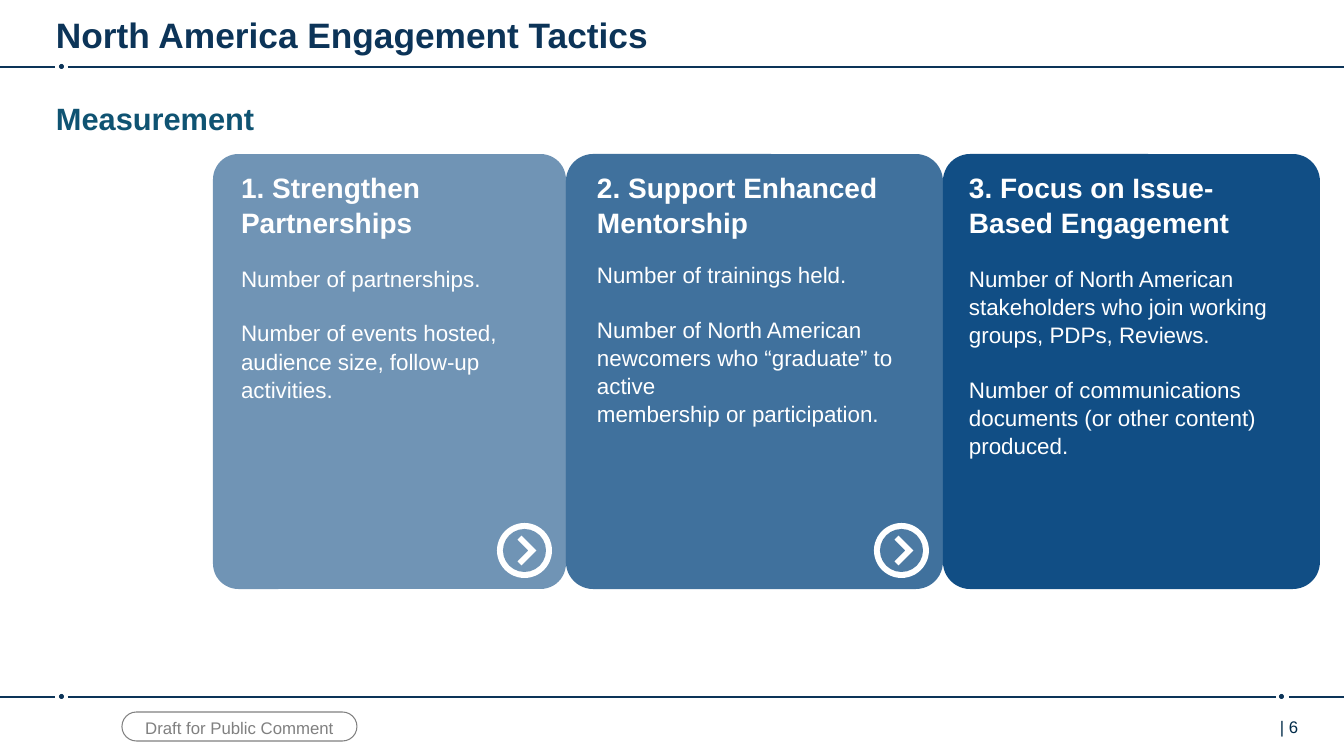
import pptx
import pptx.util
import pptx.dml.color
import pptx.oxml.ns
import pptx.enum.shapes
import pptx.enum.text
import lxml.etree as etree

PX = 914400 / 100.8
NAVY, BLUE, TEAL, GREY, WHITE = "0C3458", "114E85", "0F5372", "808080", "FFFFFF"
SHAPE = pptx.enum.shapes.MSO_SHAPE
CENTER = pptx.enum.text.PP_ALIGN.CENTER
CARD_TOP, CARD_HEIGHT = 154, 435

# Each paragraph: text, size, bold, space before in points
CARDS = [
    {"left": 213, "width": 353, "opacity": 60, "badge_opacity": 60,
     "text_left": 241, "text_width": 306, "paragraphs": [
         ("1. Strengthen Partnerships", 20, True, 0),
         ("Number of partnerships.", 16, False, 17),
         ("Number of events hosted, audience size, follow-up activities.", 16, False, 19)]},
    {"left": 566, "width": 377, "opacity": 80, "badge_opacity": 75,
     "text_left": 597, "text_width": 320, "paragraphs": [
         ("2. Support Enhanced Mentorship", 20, True, 0),
         ("Number of trainings held.", 16, False, 14.5),
         ("Number of North American newcomers who “graduate” to active", 16, False, 19),
         ("membership or participation.", 16, False, 0)]},
    {"left": 943, "width": 377, "opacity": 100, "badge_opacity": None,
     "text_left": 969, "text_width": 325, "paragraphs": [
         ("3. Focus on Issue-Based Engagement", 20, True, 0),
         ("Number of North American stakeholders who join working groups, PDPs, Reviews.",
          16, False, 17),
         ("Number of communications documents (or other content) produced.", 16, False, 19)]},
]


def px(*lengths):
    return [pptx.util.Emu(round(length * PX)) for length in lengths]


def color(hex_value):
    return pptx.dml.color.RGBColor.from_string(hex_value)


def add_block(slide, kind, box, fill, opacity=100, adjust=(), outline=None, rotation=0):
    """Add a filled preset shape; opacity is a percentage."""
    block = slide.shapes.add_shape(kind, *px(*box))
    block.shadow.inherit = False
    block.rotation = rotation
    block.fill.solid()
    block.fill.fore_color.rgb = color(fill)
    for index, value in enumerate(adjust):
        block.adjustments[index] = value
    if opacity < 100:
        tint = block._element.spPr.find(".//" + pptx.oxml.ns.qn("a:srgbClr"))
        etree.SubElement(tint, pptx.oxml.ns.qn("a:alpha"), val=str(opacity * 1000))
    if outline:
        block.line.color.rgb = color(outline)
        block.line.width = pptx.util.Pt(0.75)
    else:
        block.line.fill.background()


def add_text(slide, box, paragraphs, ink, align=None, spacing=None):
    frame = slide.shapes.add_textbox(*px(*box)).text_frame
    settings = {"word_wrap": True, "margin_left": 0, "margin_right": 0,
                "margin_top": 0, "margin_bottom": 0}
    for key, value in settings.items():
        setattr(frame, key, value)
    for index, (words, size, bold, before) in enumerate(paragraphs):
        paragraph = frame.add_paragraph() if index else frame.paragraphs[0]
        if before:
            paragraph.space_before = pptx.util.Pt(before)
        if align is not None:
            paragraph.alignment = align
        if spacing:
            paragraph.line_spacing = spacing
        run = paragraph.add_run()
        run.text = words
        look = {"name": "Arial", "size": pptx.util.Pt(size), "bold": bold}
        for key, value in look.items():
            setattr(run.font, key, value)
        run.font.color.rgb = color(ink)


def add_rule(slide, y, spans, dots):
    """Draw a horizontal rule broken by small dots."""
    for start, end in spans:
        rule = slide.shapes.add_connector(
            pptx.enum.shapes.MSO_CONNECTOR.STRAIGHT, *px(start, y, end, y))
        rule.line.color.rgb = color(NAVY)
        rule.line.width = pptx.util.Pt(1)
        etree.SubElement(rule._element.spPr, pptx.oxml.ns.qn("a:effectLst"))
    for dot in dots:
        add_block(slide, SHAPE.OVAL, (dot, y - 3, 5, 5), NAVY)


def add_arrow_badge(slide, left, top, opacity):
    add_block(slide, SHAPE.OVAL, (left, top, 55, 55), WHITE)
    add_block(slide, SHAPE.OVAL, (left + 6, top + 6, 43, 43), BLUE, opacity)
    add_block(slide, SHAPE.CORNER, (left + 14, top + 17, 21, 21), WHITE,
              adjust=(0.265, 0.265), rotation=225)


def add_card(slide, card):
    add_block(slide, SHAPE.ROUNDED_RECTANGLE,
              (card["left"], CARD_TOP, card["width"], CARD_HEIGHT),
              BLUE, card["opacity"], adjust=(0.072,))
    add_text(slide, (card["text_left"], 169, card["text_width"], 241),
             card["paragraphs"], WHITE, spacing=1.05)
    if card["badge_opacity"]:
        right = card["left"] + card["width"]
        add_arrow_badge(slide, right - 69, 523, card["badge_opacity"])


def main():
    deck = pptx.Presentation()
    deck.slide_width, deck.slide_height = px(1344, 756)
    slide = deck.slides.add_slide(deck.slide_layouts[6])

    add_rule(slide, 67, [(0, 55), (68, 1344)], [59])
    add_rule(slide, 697, [(0, 55), (68, 1276), (1289, 1344)], [59, 1279])
    add_text(slide, (56, 13, 1172, 41),
             [("North America Engagement Tactics", 25.2, True, 0)], NAVY)
    add_text(slide, (56, 100, 470, 37), [("Measurement", 22, True, 0)], TEAL)

    for card in CARDS:
        add_card(slide, card)

    add_block(slide, SHAPE.ROUNDED_RECTANGLE, (122, 712, 235, 29), WHITE,
              adjust=(0.5,), outline=GREY)
    add_text(slide, (122, 718, 235, 20),
             [("Draft for Public Comment", 12, False, 0)], GREY, align=CENTER)
    add_text(slide, (1280, 717, 64, 30), [("| 6", 12, False, 0)], "002B49")
    deck.save("out.pptx")


if __name__ == "__main__":
    main()
